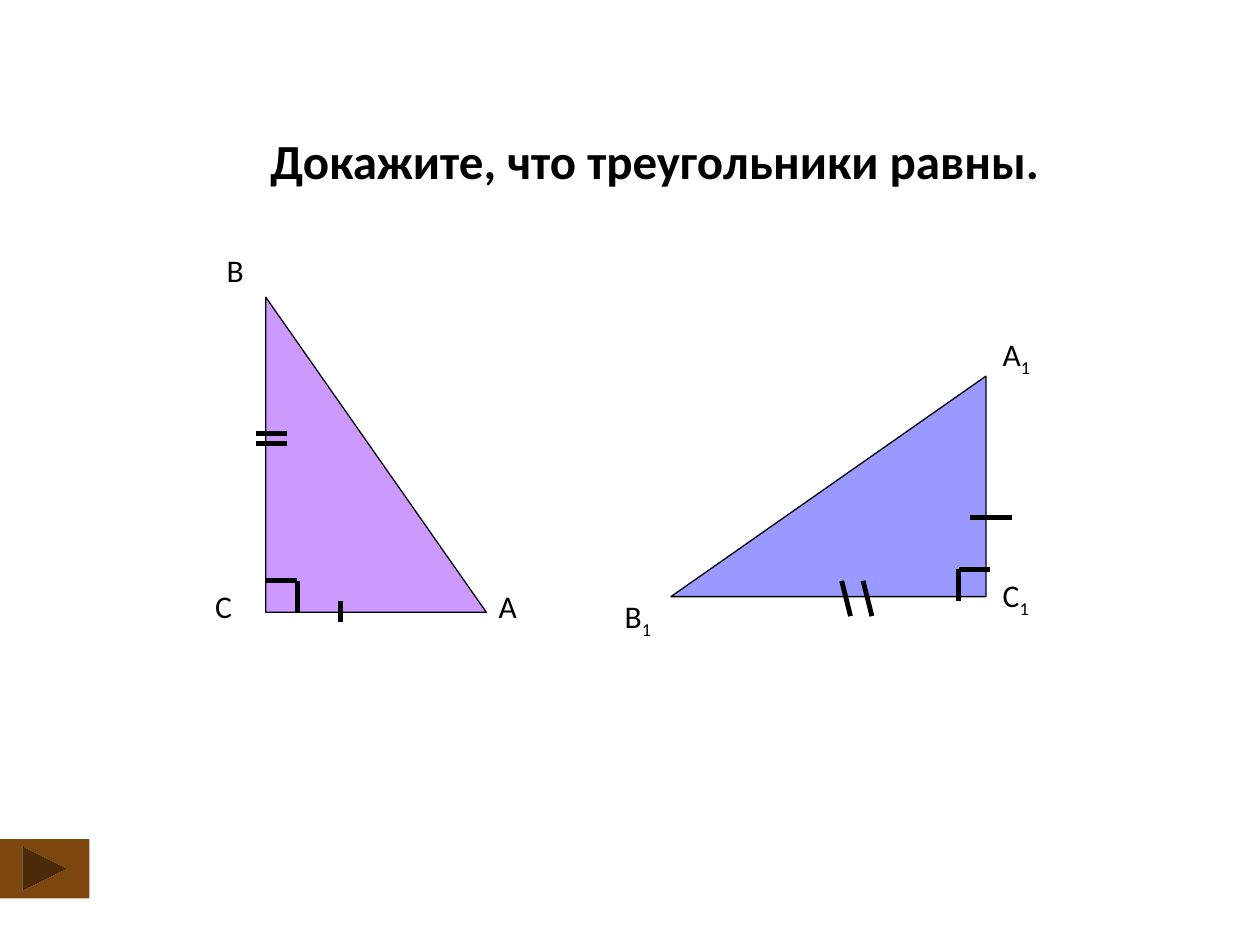
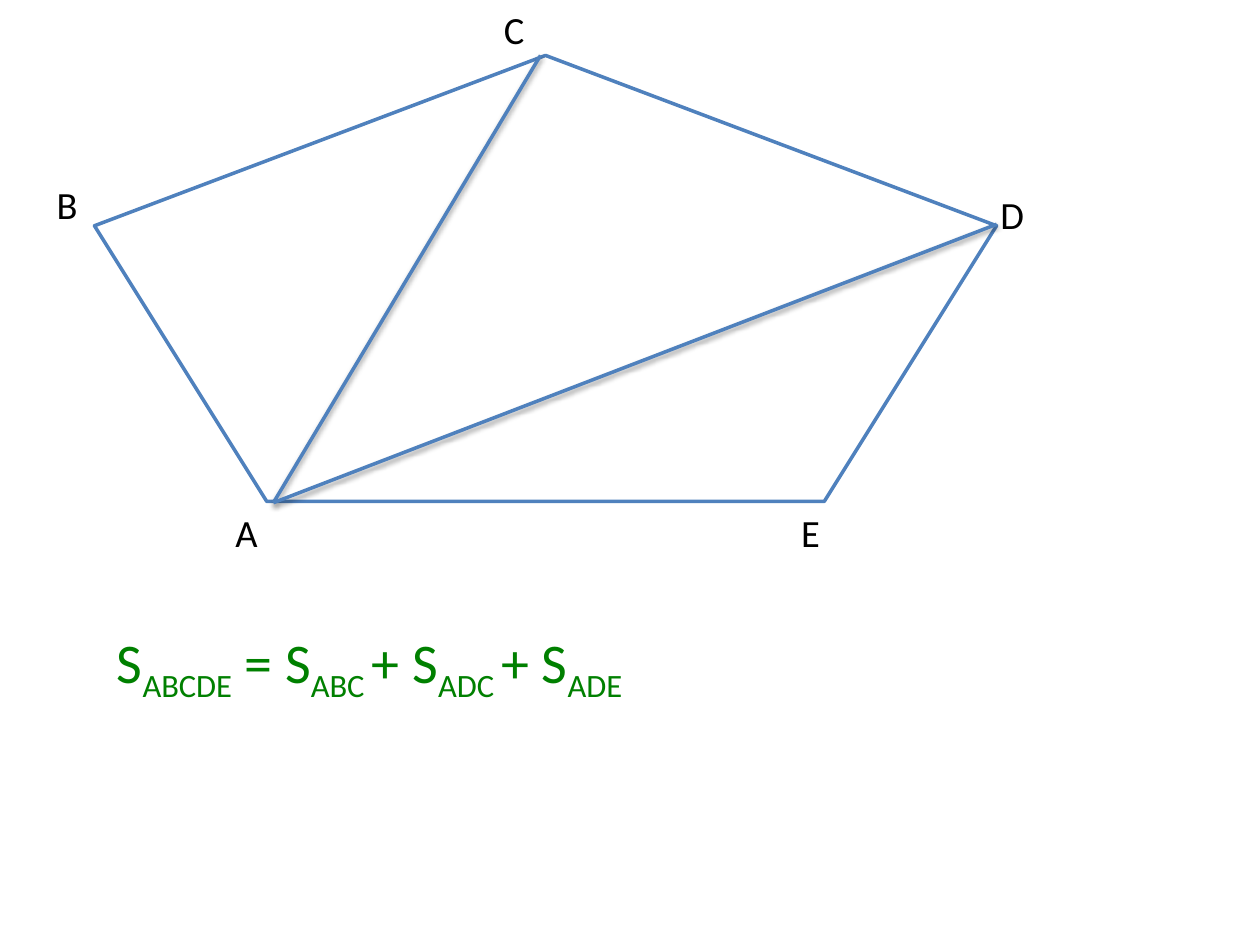
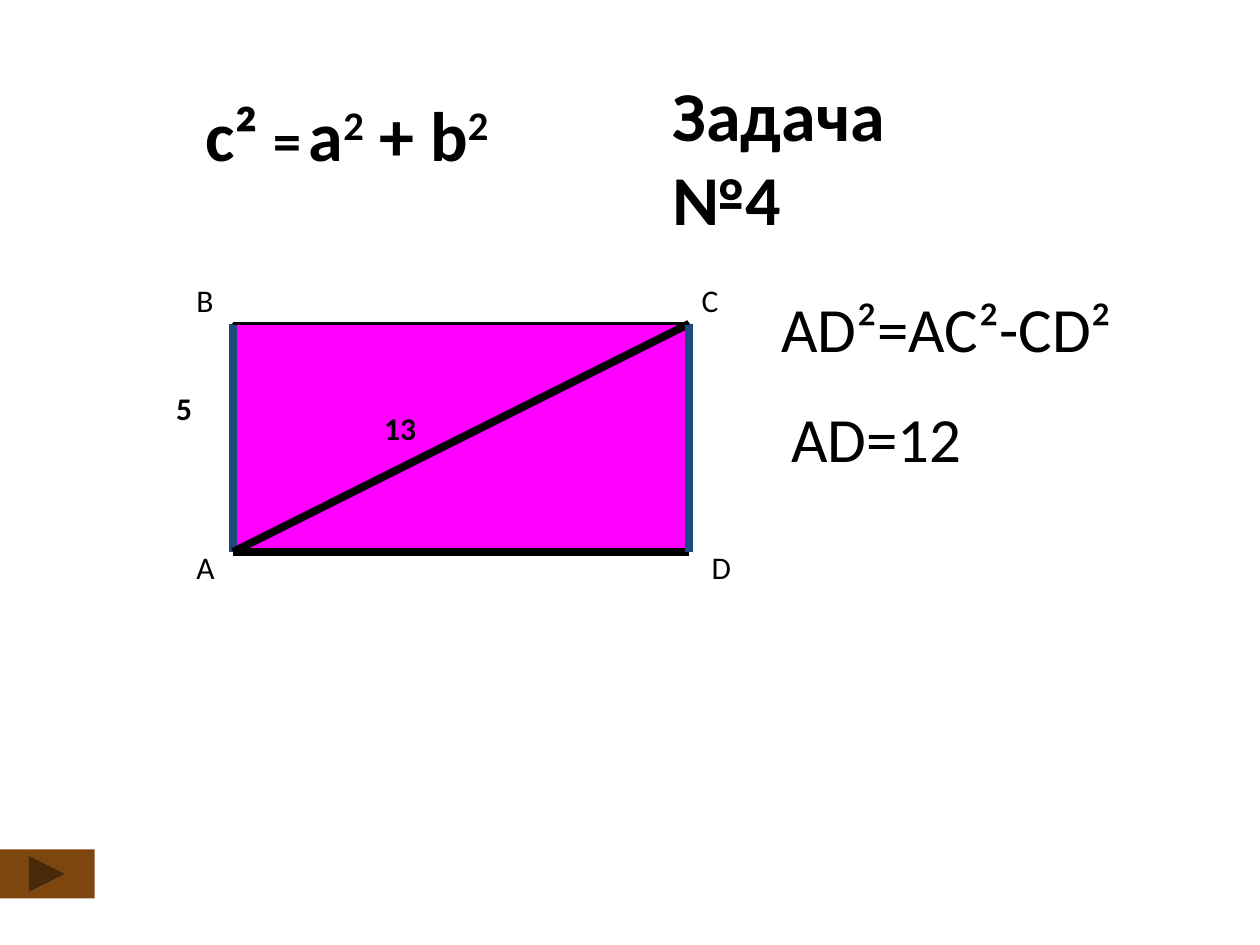
from lxml.etree import SubElement
from pptx import Presentation
from pptx.dml.color import RGBColor
from pptx.enum.shapes import MSO_CONNECTOR, MSO_SHAPE
from pptx.enum.text import PP_ALIGN
from pptx.oxml.ns import qn
from pptx.util import Inches, Pt

WIDTH, HEIGHT = Inches(10), Inches(7.5)
COL, ROW = WIDTH / 10, HEIGHT / 7.5
FONT = "Calibri"
BLACK = RGBColor(0, 0, 0)
WHITE = RGBColor(255, 255, 255)
LILAC = RGBColor(0xCC, 0x99, 0xFF)
VIOLET = RGBColor(0x99, 0x99, 0xFF)
BLUE = RGBColor(0x4F, 0x81, 0xBD)
NAVY = RGBColor(0x1F, 0x49, 0x7D)
GREEN = RGBColor(0, 0x80, 0)
PINK = RGBColor(255, 0, 255)
BROWN = RGBColor(0x7D, 0x46, 0x0F)
SUB, SUPER = -25, 30


def place(x, y):
    return int(x * COL), int(y * ROW)


def write(slide, x, y, w, h, runs, size=18, color=BLACK, bold=False, align=PP_ALIGN.LEFT):
    """Add a text box; each run is (text, baseline shift in percent, own size or None)."""
    frame = slide.shapes.add_textbox(*place(x, y), *place(w, h)).text_frame
    frame.word_wrap = True
    para = frame.paragraphs[0]
    para.alignment = align
    for text, shift, own in runs:
        run = para.add_run()
        run.text = text
        font = run.font
        font.name, font.size, font.bold = FONT, Pt(own or size), bold
        font.color.rgb = color
        if shift:
            font._element.set("baseline", str(shift * 1000))


def plain(text):
    return [(text, 0, None)]


def label(slide, x, y, name, index="", w=0.83, size=18, bold=False):
    runs = plain(name)
    if index:
        runs.append((index, SUB, None))
    write(slide, x, y, w, 0.5, runs, size, bold=bold)


def shape(slide, kind, x, y, w, h, fill, line=None, weight=0.75):
    item = slide.shapes.add_shape(kind, *place(x, y), *place(w, h))
    item.shadow.inherit = False
    item.fill.solid()
    item.fill.fore_color.rgb = fill
    if line is None:
        item.line.fill.background()
    else:
        item.line.color.rgb = line
        item.line.width = Pt(weight)
    return item


def stroke(slide, start, end, weight=2.75, color=BLACK, shadow=False):
    item = slide.shapes.add_connector(MSO_CONNECTOR.STRAIGHT, *place(*start), *place(*end))
    item.line.color.rgb = color
    item.line.width = Pt(weight)
    effects = SubElement(item._element.spPr, qn("a:effectLst"))
    if shadow:
        outer = SubElement(effects, qn("a:outerShdw"), blurRad=str(Pt(3.1)),
                           dist=str(Pt(1.6)), dir="5400000", rotWithShape="0")
        tone = SubElement(outer, qn("a:srgbClr"), val=str(BLACK))
        SubElement(tone, qn("a:alpha"), val="38000")


def button(slide, y, w, h):
    shape(slide, MSO_SHAPE.ACTION_BUTTON_FORWARD_OR_NEXT, 0, y, w, h, BROWN)


def proof(slide):
    """Two equal right triangles with their marks."""
    base, side = 1.75, 2.5
    shape(slide, MSO_SHAPE.RIGHT_TRIANGLE, 2.11, 2.36, base, side, LILAC, BLACK)
    turned = shape(slide, MSO_SHAPE.RIGHT_TRIANGLE, 5.7, 2.61, base, side, VIOLET, BLACK)
    turned.rotation = 270

    for name, x, y in (("B", 1.7, 1.94), ("C", 1.61, 4.61), ("A", 3.86, 4.61)):
        label(slide, x, y, name, w=0.42)
    for name, x, y in (("C", 7.86, 4.52), ("A", 7.86, 2.61), ("B", 4.86, 4.69)):
        label(slide, x, y, name, "1")

    stroke(slide, (2.7, 4.77), (2.7, 4.94))
    stroke(slide, (7.7, 4.11), (8.03, 4.11))
    for y in (3.44, 3.52):
        stroke(slide, (2.03, y), (2.28, y))
    for x in (6.68, 6.85):
        stroke(slide, (x + 0.07, 4.89), (x, 4.61))

    arm = 0.25
    for x, y, way in ((2.36, 4.61, -1), (7.61, 4.52, 1)):
        stroke(slide, (x, y), (x + way * arm, y))
        stroke(slide, (x, y), (x, y + arm))

    write(slide, 1.61, 0.99, 7.17, 0.57, plain("Докажите, что треугольники равны."),
          28, bold=True, align=PP_ALIGN.CENTER)
    button(slide, 6.66, 0.71, 0.47)


def area(slide):
    """A pentagon cut into triangles from one corner."""
    shape(slide, MSO_SHAPE.REGULAR_PENTAGON, 0.75, 0.44, 7.16, 3.54, WHITE, BLUE, 2)
    for name, x, y in (("A", 1.77, 3.99), ("B", 0.35, 1.39), ("C", 3.9, 0),
                       ("D", 7.84, 1.47), ("E", 6.26, 3.99)):
        label(slide, x, y, name, w=0.55, size=22)
    for end in ((4.29, 0.44), (7.91, 1.78)):
        stroke(slide, (2.17, 3.99), end, 2, BLUE, shadow=True)
    terms = (("S", "ABCDE"), (" = S", "ABC "), ("+ S", "ADC "), ("+ S", "ADE"))
    runs = []
    for sign, index in terms:
        runs += [(sign, 0, None), (index, SUB, None)]
    write(slide, 0.83, 4.93, 8.43, 0.63, runs, 32, GREEN)


def task(slide):
    """A rectangle whose side follows from its diagonal."""
    write(slide, 1.53, 0.68, 3.08, 0.77,
          [("с² ", 0, None), ("=", 0, 32), (" ", 0, 18), ("а", 0, None),
           ("2", SUPER, None), (" + b", 0, None), ("2", SUPER, None)], 40, bold=True)
    write(slide, 5.24, 0.52, 2.28, 1.45, plain("Задача №4"), 40, bold=True)

    left, top, w, h = 1.85, 2.57, 3.62, 1.81
    right, low = left + w, top + h
    a, b, c, d = (left, low), (left, top), (right, top), (right, low)
    shape(slide, MSO_SHAPE.RECTANGLE, left, top, w, h, PINK, BLACK)
    for start, end, color, weight in ((a, b, NAVY, 4.5), (a, c, BLACK, 4.5),
                                      (a, d, BLACK, 4.5), (c, d, NAVY, 4.5),
                                      (b, c, BLACK, 1.5)):
        stroke(slide, start, end, weight, color)

    for name, x, y in (("A", 1.46, 4.3), ("B", 1.46, 2.18), ("C", 5.47, 2.18), ("D", 5.55, 4.3)):
        label(slide, x, y, name, w=0.71)
    for name, x, y in (("5", 1.3, 3.04), ("13", 2.95, 3.2)):
        label(slide, x, y, name, w=0.71, bold=True)
    for text, x, y in (("AD²=AC²-CD²", 6.1, 2.25), ("AD=12", 6.18, 3.12)):
        write(slide, x, y, w, 0.7, plain(text), 36)
    button(slide, 6.74, 0.75, 0.39)


def main():
    deck = Presentation()
    deck.slide_width, deck.slide_height = WIDTH, HEIGHT
    for draw in (proof, area, task):
        draw(deck.slides.add_slide(deck.slide_layouts[6]))
    deck.save("out.pptx")


if __name__ == "__main__":
    main()
